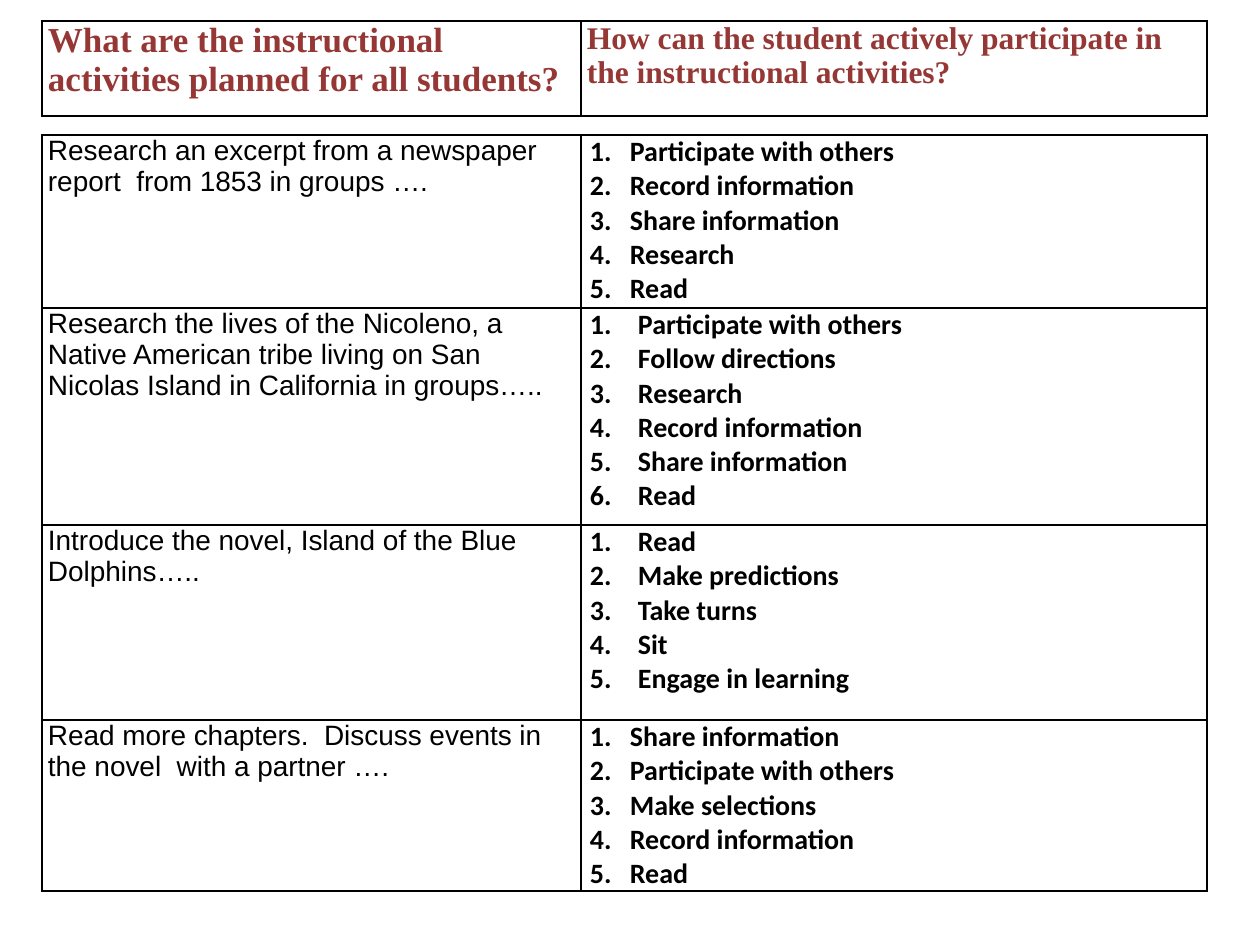
from lxml.etree import SubElement
from pptx import Presentation
from pptx.dml.color import RGBColor
from pptx.oxml.ns import qn
from pptx.util import Pt

EMU_PER_PX = 914400 / 126
COLUMNS = (539, 626)
HEADING = {"name": "Times New Roman", "bold": True}
ACTIVITY = {"name": "Arial", "size": Pt(16), "bold": False}
STEP = {"name": "Calibri", "size": Pt(16), "bold": True}

QUESTIONS = (
    ("What are the instructional activities planned for all students?", 20),
    ("How can the student actively participate in the instructional activities?", 18),
)
LESSONS = (
    (173, 40, "Research an excerpt from a newspaper report  from 1853 in groups ….",
     ("Participate with others", "Record information", "Share information", "Research", "Read")),
    (217, 48, "Research the lives of the Nicoleno, a Native American tribe living on "
     "San Nicolas Island in California in groups…..",
     ("Participate with others", "Follow directions", "Research", "Record information",
      "Share information", "Read")),
    (195, 48, "Introduce the novel, Island of the Blue Dolphins…..",
     ("Read", "Make predictions", "Take turns", "Sit", "Engage in learning")),
    (171, 40, "Read more chapters.  Discuss events in the novel  with a partner ….",
     ("Share information", "Participate with others", "Make selections",
      "Record information", "Read")),
)


def px(length):
    return round(length * EMU_PER_PX)


def color(value):
    return RGBColor.from_string(value)


def set_attributes(target, values):
    for key, value in values.items():
        setattr(target, key, value)


def add_border(cell):
    properties = cell._tc.get_or_add_tcPr()
    for position, side in enumerate(("lnL", "lnR", "lnT", "lnB")):
        line = SubElement(properties, qn(f"a:{side}"), w=str(Pt(1)))
        properties.insert(position, line)
        ink = SubElement(line, qn("a:solidFill"))
        SubElement(ink, qn("a:srgbClr"), val="000000")


def add_grid(slide, left, top, heights):
    grid = slide.shapes.add_table(
        len(heights), len(COLUMNS), px(left), px(top), px(sum(COLUMNS)), px(sum(heights))
    ).table
    set_attributes(grid, {"first_row": False, "horz_banding": False})
    for column, width in zip(grid.columns, COLUMNS):
        column.width = px(width)
    for row, height in zip(grid.rows, heights):
        row.height = px(height)
    for cell in grid.iter_cells():
        cell.fill.solid()
        cell.fill.fore_color.rgb = color("FFFFFF")
        add_border(cell)
    return grid


def write_cell(cell, lines, font, ink, inset=6, indent=0):
    set_attributes(cell, {"margin_left": px(inset), "margin_right": px(inset),
                          "margin_top": 0, "margin_bottom": 0})
    frame = cell.text_frame
    for index, line in enumerate(lines):
        paragraph = frame.add_paragraph() if index else frame.paragraphs[0]
        run = paragraph.add_run()
        run.text = line
        set_attributes(run.font, font)
        run.font.color.rgb = color(ink)
        if indent:
            properties = paragraph._p.get_or_add_pPr()
            properties.set("marL", str(px(indent)))
            properties.set("indent", str(-px(indent)))
            SubElement(properties, qn("a:buFont"), typeface="+mj-lt")
            SubElement(properties, qn("a:buAutoNum"), type="arabicPeriod")


def add_questions(slide, left, top, height):
    grid = add_grid(slide, left, top, [height])
    for cell, (question, size) in zip(grid.iter_cells(), QUESTIONS):
        write_cell(cell, [question], HEADING | {"size": Pt(size)}, "953735")


def add_lessons(slide, left, top):
    grid = add_grid(slide, left, top, [lesson[0] for lesson in LESSONS])
    for row, (_, indent, activity, steps) in zip(grid.rows, LESSONS):
        activity_cell, steps_cell = row.cells
        write_cell(activity_cell, [activity], ACTIVITY, "000000")
        write_cell(steps_cell, steps, STEP, "000000", inset=9, indent=indent)


def main():
    deck = Presentation()
    set_attributes(deck, {"slide_width": px(1260), "slide_height": px(945)})
    slide = deck.slides.add_slide(deck.slide_layouts[6])
    add_lessons(slide, 42, 135)
    add_questions(slide, 42, 21, 95)
    deck.save("out.pptx")


if __name__ == "__main__":
    main()
